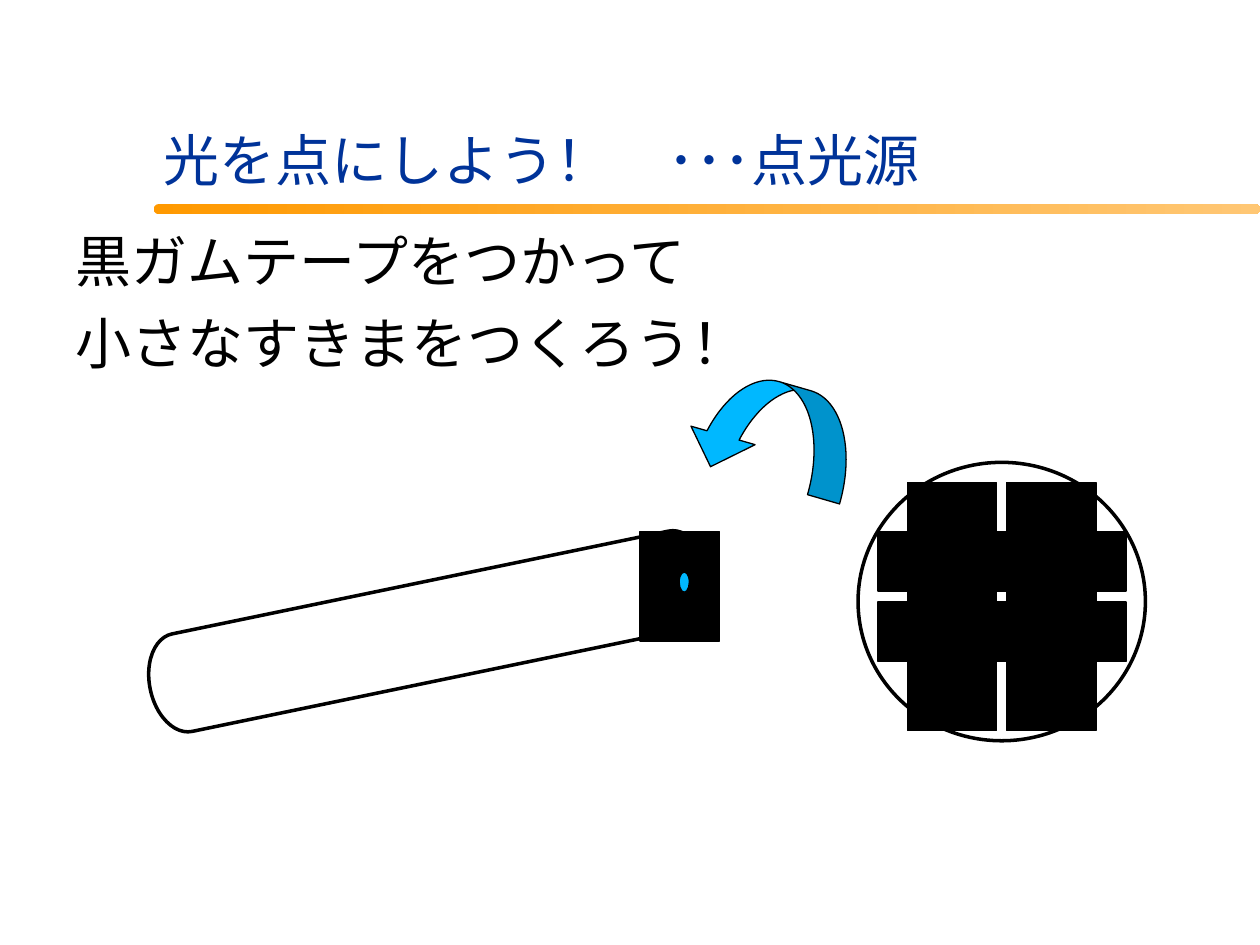
from pptx import Presentation
from pptx import util as u
from pptx.dml.color import RGBColor
from pptx.enum import shapes, text
from pptx.oxml.ns import qn
from lxml import etree

FONT = "Karla"
COLORS = {
    "title": "003399",
    "black": "000000",
    "white": "FFFFFF",
    "light": "00B8FF",
    "bar_start": "FF9900",
    "bar_end": "FFC774",
}
SHAPE = shapes.MSO_SHAPE


def color(name):
    return RGBColor.from_string(COLORS[name])


def add_outlined(slide, kind, box, fill, line_width=0.75, rotation=0, adjustments=()):
    """Add a filled shape with a black outline; box is in points."""
    shape = slide.shapes.add_shape(kind, *[u.Pt(value) for value in box])
    shape.shadow.inherit = False
    shape.rotation = rotation
    for index, value in enumerate(adjustments):
        shape.adjustments[index] = value
    shape.fill.solid()
    shape.fill.fore_color.rgb = color(fill)
    shape.line.color.rgb = color("black")
    shape.line.width = u.Pt(line_width)
    return shape


def add_title_bar(slide, box):
    bar = slide.shapes.add_shape(SHAPE.ROUNDED_RECTANGLE, *[u.Pt(value) for value in box])
    bar.shadow.inherit = False
    bar.adjustments[0] = 0.5
    bar.line.fill.background()
    bar.fill.gradient()
    bar.fill.gradient_angle = 0
    for stop, name in zip(bar.fill.gradient_stops, ("bar_start", "bar_end")):
        stop.color.rgb = color(name)


def fill_placeholder(placeholder, box, content, color_name, anchor):
    placeholder.left, placeholder.top, placeholder.width, placeholder.height = [
        u.Pt(value) for value in box
    ]
    frame = placeholder.text_frame
    frame.text = content
    frame.word_wrap = True
    frame.auto_size = text.MSO_AUTO_SIZE.NONE
    frame.vertical_anchor = anchor
    for paragraph in frame.paragraphs:
        for run in paragraph.runs:
            run.font.size = u.Pt(32)
            run.font.name = FONT
            run.font.color.rgb = color(color_name)
    return frame


def format_body(frame):
    """Hanging indent without bullets, space between the lines."""
    for index, paragraph in enumerate(frame.paragraphs):
        properties = paragraph._p.get_or_add_pPr()
        properties.set("marL", str(u.Pt(27)))
        properties.set("indent", str(u.Pt(-27)))
        etree.SubElement(properties, qn("a:buNone"))
        paragraph.space_before = u.Pt(8 if index else 0)


def add_taped_end(slide):
    """Round tube end with two upright and two sideways strips of tape."""
    add_outlined(slide, SHAPE.OVAL, (490.3, 264.2, 164.2, 159.1), "white", 2)
    length = 141.8
    for width, rotation, centers in (
        (51.1, 0, ((544, 346.7), (600.8, 346.7))),
        (33.8, 90, ((572.6, 361), (572.6, 320.8))),
    ):
        for x, y in centers:
            box = (x - width / 2, y - length / 2, width, length)
            add_outlined(slide, SHAPE.RECTANGLE, box, "black", rotation=rotation)


def add_tube(slide):
    """Tilted tube, an arrow to its end, the tape and the point of light."""
    add_outlined(slide, SHAPE.CAN, (217.4, 197.3, 56.9, 326.9), "white", 2, 78.3, (0.654,))
    add_outlined(slide, SHAPE.CURVED_UP_ARROW, (393.8, 218.2, 95.8, 57.6), "light",
                 rotation=196.1, adjustments=(0.331, 0.662, 0.333))
    add_outlined(slide, SHAPE.RECTANGLE, (365.8, 303.8, 45.4, 62.6), "black")
    add_outlined(slide, SHAPE.OVAL, (388.1, 326.9, 5.8, 11.5), "light")


def main():
    presentation = Presentation()
    presentation.slide_width = u.Pt(720)
    presentation.slide_height = u.Pt(540)
    slide = presentation.slides.add_slide(presentation.slide_layouts[1])

    # Title and text
    title = fill_placeholder(slide.shapes.title, (54.7, 7.9, 509.8, 165.6),
                             "光を点にしよう！　･･･点光源", "title", text.MSO_ANCHOR.MIDDLE)
    title.paragraphs[0].alignment = text.PP_ALIGN.CENTER
    body = fill_placeholder(slide.placeholders[1], (36, 126, 647.3, 356.4),
                            "黒ガムテープをつかって\n小さなすきまをつくろう！",
                            "black", text.MSO_ANCHOR.TOP)
    format_body(body)
    add_title_bar(slide, (87.8, 116.6, 632.2, 5.8))

    # Drawing
    add_taped_end(slide)
    add_tube(slide)

    presentation.save("out.pptx")


if __name__ == "__main__":
    main()
